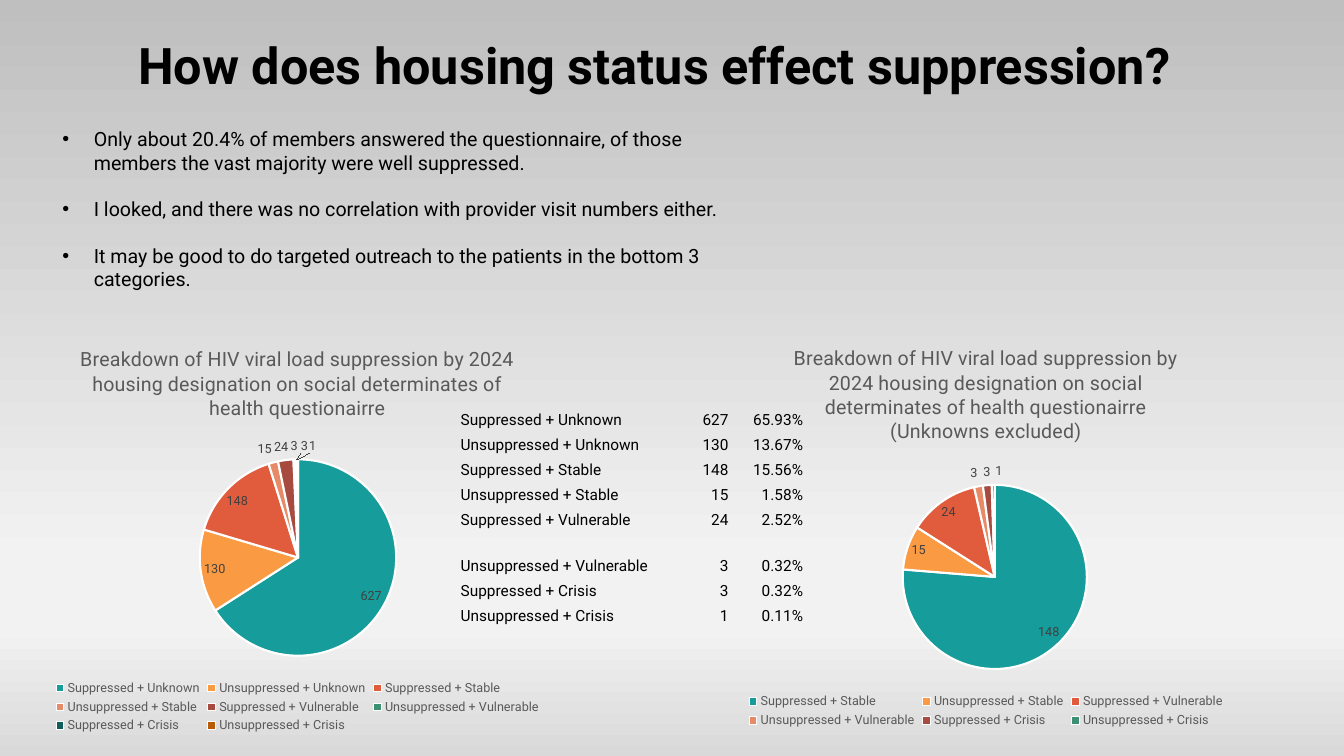
"""Build the slide on housing status and viral load suppression."""
from lxml import etree
from pptx import Presentation
from pptx.chart.data import CategoryChartData
from pptx.dml.color import RGBColor
from pptx.enum.chart import XL_CHART_TYPE, XL_LABEL_POSITION, XL_LEGEND_POSITION
from pptx.enum.text import MSO_ANCHOR, MSO_AUTO_SIZE, PP_ALIGN
from pptx.oxml.ns import qn
from pptx.util import Cm, Pt

PIE = XL_CHART_TYPE.PIE
BEST_FIT = XL_LABEL_POSITION.BEST_FIT
LEGEND_BOTTOM = XL_LEGEND_POSITION.BOTTOM
TOP, BOTTOM = MSO_ANCHOR.TOP, MSO_ANCHOR.BOTTOM
NO_AUTOFIT = MSO_AUTO_SIZE.NONE
LEFT, CENTER, RIGHT = PP_ALIGN.LEFT, PP_ALIGN.CENTER, PP_ALIGN.RIGHT

FONT = "Roboto"
BLACK = RGBColor(0x00, 0x00, 0x00)
WHITE = RGBColor(0xFF, 0xFF, 0xFF)
GRAY = RGBColor(0x59, 0x59, 0x59)
DARK_GRAY = RGBColor(0x40, 0x40, 0x40)
SLICE_COLORS = [
    RGBColor(0x16, 0x9C, 0x9A), RGBColor(0xFA, 0x9A, 0x42),
    RGBColor(0xE1, 0x5C, 0x3D), RGBColor(0xE7, 0x8A, 0x67),
    RGBColor(0xA7, 0x4B, 0x40), RGBColor(0x3D, 0x90, 0x72),
    RGBColor(0x0D, 0x5E, 0x5C), RGBColor(0xB9, 0x5B, 0x05),
]
BACKDROP = [
    (0, RGBColor(0xBF, 0xBF, 0xBF)), (74, RGBColor(0xF2, 0xF2, 0xF2)),
    (83, RGBColor(0xF2, 0xF2, 0xF2)), (100, RGBColor(0xD9, 0xD9, 0xD9)),
]
NO_GRID_STYLE = "{2D5ABB26-0587-4C30-8999-92F81FD0307C}"

HEADLINE = "How does housing status effect suppression?"
FINDINGS = [
    "Only about 20.4% of members answered the questionnaire, of those members "
    "the vast majority were well suppressed.",
    "I looked, and there was no correlation with provider visit numbers either.",
    "It may be good to do targeted outreach to the patients in the bottom 3 categories.",
]
GROUPS = [
    ("Suppressed + Unknown", 627),
    ("Unsuppressed + Unknown", 130),
    ("Suppressed + Stable", 148),
    ("Unsuppressed + Stable", 15),
    ("Suppressed + Vulnerable", 24),
    ("Unsuppressed + Vulnerable", 3),
    ("Suppressed + Crisis", 3),
    ("Unsuppressed + Crisis", 1),
]
KNOWN_GROUPS = GROUPS[2:]
BREAKDOWN = ("Breakdown of HIV viral load suppression by 2024 housing designation "
             "on social determinates of health questionairre")
CHARTS = [
    {"title": BREAKDOWN, "groups": GROUPS,
     "box": (0.41, 8.28, 14.17, 10.29), "pie": (7.51, 14.05, 4.95)},
    {"title": BREAKDOWN + "\n(Unknowns excluded)", "groups": KNOWN_GROUPS,
     "box": (18.01, 8.28, 13.67, 10.16), "pie": (25.07, 14.54, 4.64)},
]
TABLE_BOX = (11.58, 10.19, 8.69, 5.56)
COLUMN_WIDTHS = (4.93, 1.88, 1.88)
ROW_HEIGHT, TALL_ROW_HEIGHT, TALL_ROW = 0.63, 1.15, 5


def style_font(font, size, color, bold=False):
    font.name, font.size, font.bold = FONT, Pt(size), bold
    font.color.rgb = color


def place(shape, left, top, width, height):
    shape.left, shape.top = Cm(left), Cm(top)
    shape.width, shape.height = Cm(width), Cm(height)


def paint_background(slide):
    fill = slide.background.fill
    fill.gradient()
    fill.gradient_angle = 270
    stops = slide._element.find(".//" + qn("a:gsLst"))
    for stop in list(stops):
        stops.remove(stop)
    for percent, color in BACKDROP:
        stop = etree.SubElement(stops, qn("a:gs"), pos=str(percent * 1000))
        etree.SubElement(stop, qn("a:srgbClr"), val=str(color))


def add_headline(slide):
    headline = slide.shapes.title
    place(headline, 1.7, 0.91, 29.59, 3.15)
    frame = headline.text_frame
    frame.text = HEADLINE
    frame.vertical_anchor, frame.auto_size = TOP, NO_AUTOFIT
    paragraph = frame.paragraphs[0]
    paragraph.alignment, paragraph.line_spacing = CENTER, 0.9
    style_font(paragraph.runs[0].font, 36, BLACK, True)


def add_findings(slide):
    findings = slide.placeholders[1]
    place(findings, 1.32, 3.07, 17.12, 5.05)
    frame = findings.text_frame
    frame.text = "\n".join(FINDINGS)
    frame.vertical_anchor, frame.auto_size = TOP, NO_AUTOFIT
    for index, paragraph in enumerate(frame.paragraphs):
        paragraph.space_before = Pt(16.5 if index else 0)
        properties = paragraph._p.get_or_add_pPr()
        properties.set("marL", str(Cm(0.79)))
        properties.set("indent", str(Cm(-0.79)))
        etree.SubElement(properties, qn("a:buChar"), char="•")
        style_font(paragraph.runs[0].font, 14, BLACK)


def position_pie(chart, box, pie):
    left, top, width, height = box
    center_x, center_y, diameter = pie
    plot_area = chart._chartSpace.find(".//" + qn("c:plotArea"))
    for old_layout in plot_area.findall(qn("c:layout")):
        plot_area.remove(old_layout)
    layout = etree.Element(qn("c:layout"))
    plot_area.insert(0, layout)
    manual = etree.SubElement(layout, qn("c:manualLayout"))
    settings = [
        ("layoutTarget", "inner"), ("xMode", "edge"), ("yMode", "edge"),
        ("x", (center_x - diameter / 2 - left) / width),
        ("y", (center_y - diameter / 2 - top) / height),
        ("w", diameter / width), ("h", diameter / height),
    ]
    for tag, value in settings:
        etree.SubElement(manual, qn("c:" + tag), val=str(value))


def add_pie(slide, title, groups, box, pie):
    data = CategoryChartData()
    data.categories = [name for name, _ in groups]
    data.add_series("Series 1", [count for _, count in groups])
    chart = slide.shapes.add_chart(PIE, *map(Cm, box), data).chart
    style_font(chart.font, 10, BLACK)
    chart.has_title = True
    chart.chart_title.text_frame.text = title
    for paragraph in chart.chart_title.text_frame.paragraphs:
        style_font(paragraph.runs[0].font, 14, GRAY)
    chart.chart_title.include_in_layout = False
    chart.has_legend = True
    chart.legend.position = LEGEND_BOTTOM
    chart.legend.include_in_layout = False
    style_font(chart.legend.font, 9, GRAY)
    plot = chart.plots[0]
    plot.vary_by_categories = True
    plot.has_data_labels = True
    labels = plot.data_labels
    labels.show_value, labels.show_percentage = True, False
    labels.position = BEST_FIT
    style_font(labels.font, 9, DARK_GRAY)
    for index in range(len(groups)):
        form = plot.series[0].points[index].format
        form.fill.solid()
        form.fill.fore_color.rgb = SLICE_COLORS[index]
        form.line.color.rgb = WHITE
        form.line.width = Pt(1.5)
    position_pie(chart, box, pie)


def add_counts(slide):
    total = sum(count for _, count in GROUPS)
    counts = slide.shapes.add_table(
        len(GROUPS), len(COLUMN_WIDTHS), *map(Cm, TABLE_BOX)).table
    counts.first_row = counts.horz_banding = False
    counts._tbl.find(".//" + qn("a:tableStyleId")).text = NO_GRID_STYLE
    for column, width in zip(counts.columns, COLUMN_WIDTHS):
        column.width = Cm(width)
    for index, (name, count) in enumerate(GROUPS):
        counts.rows[index].height = Cm(TALL_ROW_HEIGHT if index == TALL_ROW else ROW_HEIGHT)
        values = (name, str(count), f"{count / total:.2%}")
        for cell, value, alignment in zip(counts.rows[index].cells, values, (LEFT, RIGHT, RIGHT)):
            cell.text = value
            cell.fill.background()
            cell.vertical_anchor = BOTTOM
            cell.margin_left = cell.margin_right = cell.margin_top = Cm(0.03)
            cell.margin_bottom = 0
            paragraph = cell.text_frame.paragraphs[0]
            paragraph.alignment = alignment
            style_font(paragraph.runs[0].font, 11, BLACK)


def main():
    deck = Presentation()
    deck.slide_width, deck.slide_height = Cm(33.87), Cm(19.05)
    slide = deck.slides.add_slide(deck.slide_layouts[1])
    paint_background(slide)
    add_headline(slide)
    add_findings(slide)
    for chart in CHARTS:
        add_pie(slide, **chart)
    add_counts(slide)
    deck.save("out.pptx")


if __name__ == "__main__":
    main()
